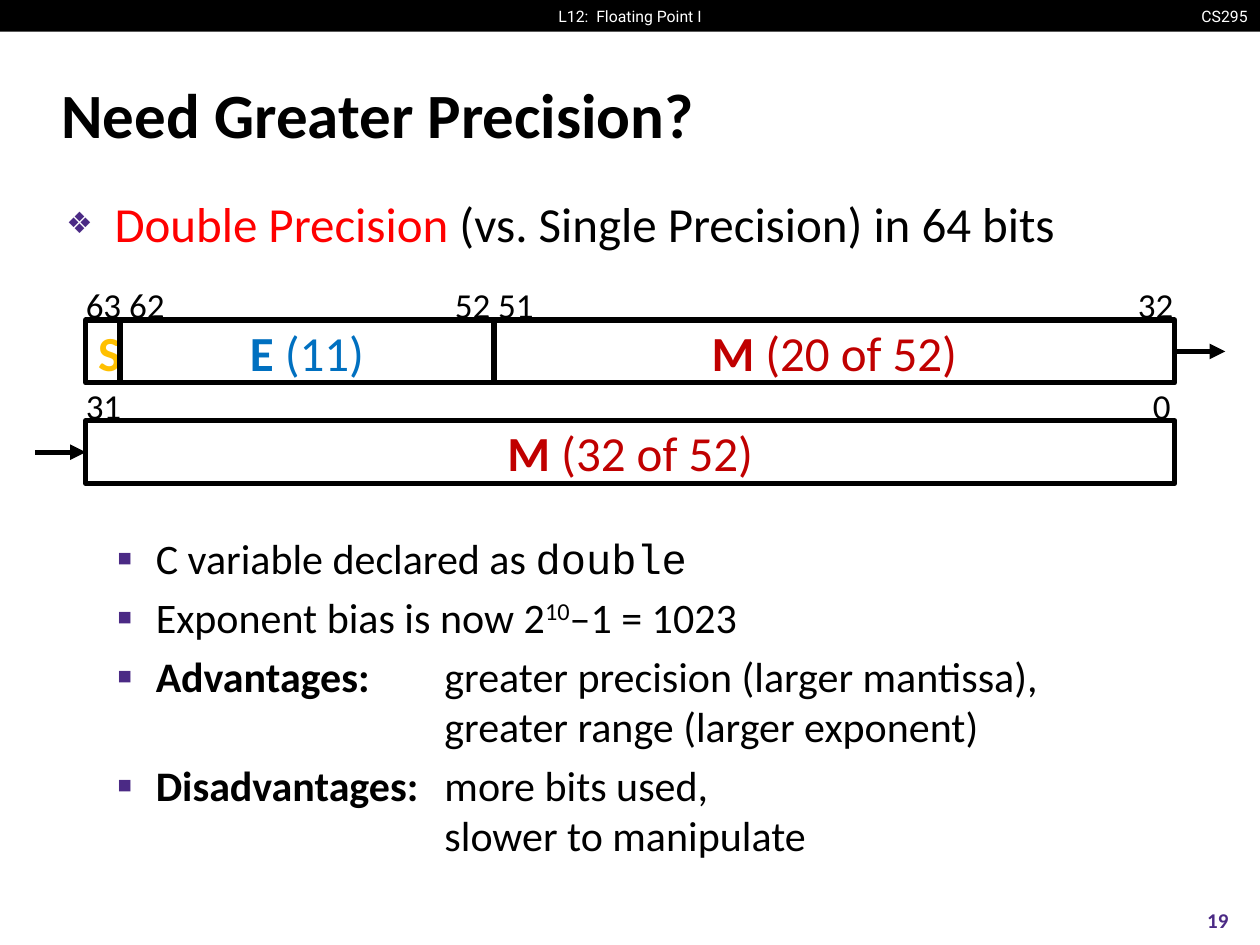
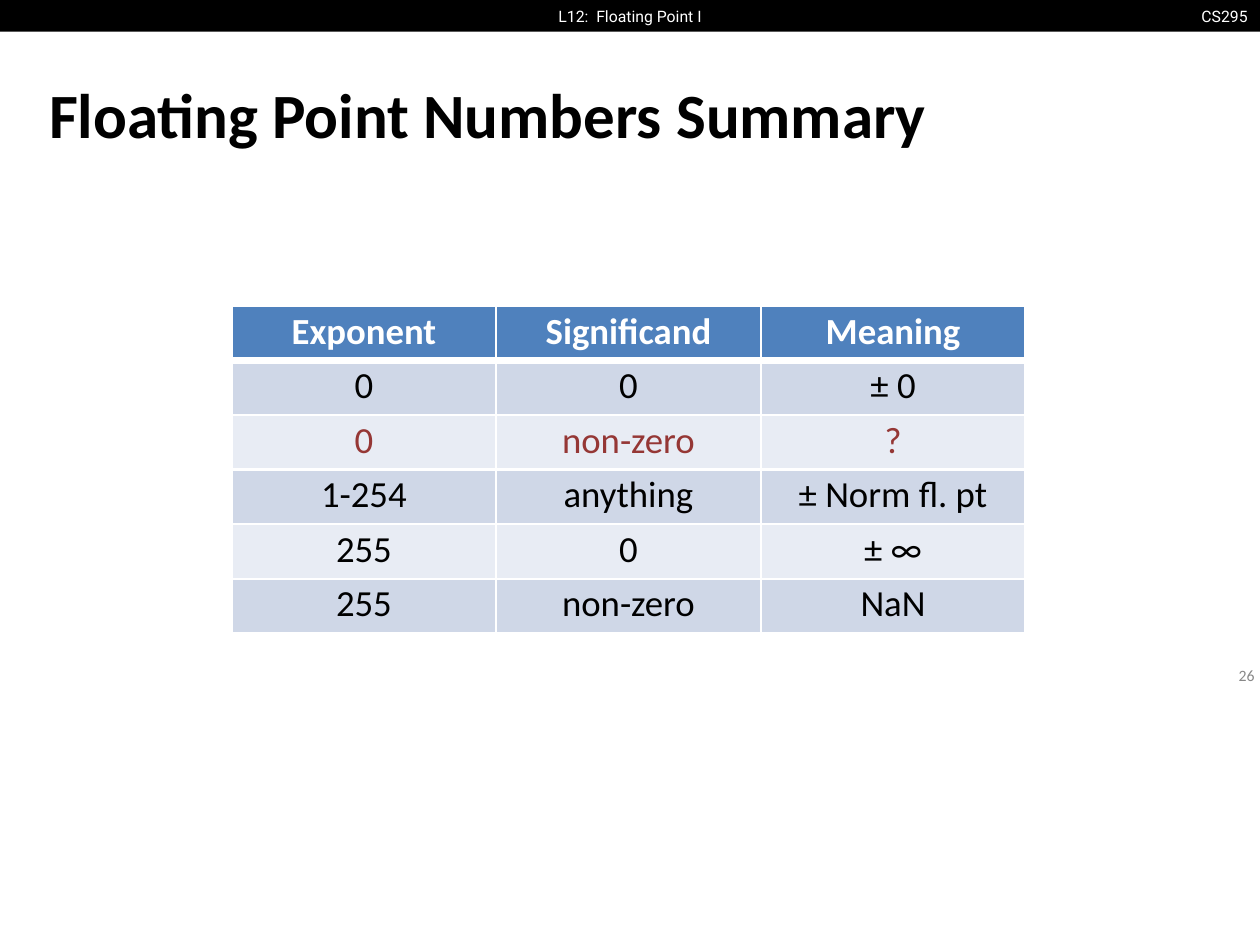
from dataclasses import dataclass
from lxml import etree
from pptx import Presentation
from pptx import util as u
from pptx.dml.color import RGBColor
from pptx.enum import shapes, text
from pptx.oxml.ns import qn


@dataclass(frozen=True)
class Theme:
    font: str = "Calibri"
    code_font: str = "Courier New"
    band_font: str = "Roboto"
    black: str = "000000"
    white: str = "FFFFFF"
    grey: str = "888888"
    purple: str = "4B2A85"
    red: str = "FF0000"
    sign: str = "FFC000"
    exponent: str = "0070C0"
    mantissa: str = "C00000"
    header: str = "4F81BD"
    stripes: tuple = ("CFD7E7", "E8ECF4")
    highlight: str = "953735"
    title: int = 36
    lead: int = 28
    item: int = 24
    cell: int = 21
    bit: int = 20
    number: int = 12
    small: int = 9


T = Theme()
ALIGN = text.PP_ALIGN
WIDTH, HEIGHT = 25.4, 19.05
TITLE_BOX = (0.99, 1.22, 23.34, 2.11)


def cm(*values):
    return [u.Cm(v) for v in values]


def sub(parent, tag, **attrs):
    return etree.SubElement(parent, qn(tag), **attrs)


def write(p, words, size=T.item, color=T.black, font=T.font, bold=False,
          align=None, baseline=None):
    if align is not None:
        p.alignment = align
    for i, line in enumerate(words.split("\n")):
        if i:
            p.add_line_break()
            sub(p._p[-1], "a:rPr", sz=str(size * 100))
        r = p.add_run()
        r.text = line
        r.font.size = u.Pt(size)
        r.font.name = font
        r.font.bold = bold
        r.font.color.rgb = RGBColor.from_string(color)
        if baseline:
            r._r.get_or_add_rPr().set("baseline", str(baseline * 1000))


def set_frame(tf, wrap=True, anchor=text.MSO_ANCHOR.TOP, side=0.25, edge=0.13):
    tf.word_wrap = wrap
    tf.auto_size = text.MSO_AUTO_SIZE.NONE
    tf.vertical_anchor = anchor
    tf.margin_left = tf.margin_right = u.Cm(side)
    tf.margin_top = tf.margin_bottom = u.Cm(edge)


def add_text(s, box, words, wrap=False, anchor=text.MSO_ANCHOR.TOP,
             side=0.25, edge=0.13, **fmt):
    tf = s.shapes.add_textbox(*cm(*box)).text_frame
    set_frame(tf, wrap, anchor, side, edge)
    write(tf.paragraphs[0], words, **fmt)


def add_rect(s, box, fill=None, line=None):
    sp = s.shapes.add_shape(shapes.MSO_SHAPE.RECTANGLE, *cm(*box))
    sp.shadow.inherit = False
    if fill:
        sp.fill.solid()
        sp.fill.fore_color.rgb = RGBColor.from_string(fill)
    else:
        sp.fill.background()
    if line:
        sp.line.color.rgb = RGBColor.from_string(line)
        sp.line.width = u.Pt(3)
    else:
        sp.line.fill.background()
    return sp


def add_arrow(s, x, y, length):
    c = s.shapes.add_connector(shapes.MSO_CONNECTOR.STRAIGHT, *cm(x, y, x + length, y))
    c.line.color.rgb = RGBColor.from_string(T.black)
    c.line.width = u.Pt(3)
    sub(c.line._get_or_add_ln(), "a:tailEnd", type="triangle")
    sub(c._element.spPr, "a:effectLst")
    return c


def add_band(s, box):
    x, y, w, h = box
    add_rect(s, box, fill=T.black)
    fmt = dict(size=T.small, color=T.white, font=T.band_font)
    add_text(s, (x + w - 1.5, y, 1.5, h), "CS295", align=ALIGN.RIGHT, **fmt)
    add_text(s, (x + w / 2 - 2.36, y, 4.72, h), "L12:  Floating Point I",
             align=ALIGN.CENTER, **fmt)


def place(sp, box):
    sp.left, sp.top, sp.width, sp.height = cm(*box)


def new_slide(prs, layout, title, side=0.25):
    s = prs.slides.add_slide(prs.slide_layouts[layout])
    add_band(s, (0, 0, WIDTH, 0.64))
    place(s.shapes.title, TITLE_BOX)
    tf = s.shapes.title.text_frame
    set_frame(tf, anchor=text.MSO_ANCHOR.MIDDLE, side=side)
    write(tf.paragraphs[0], title, size=T.title, bold=True, align=ALIGN.LEFT)
    return s


def set_bullet(p, char, percent, margin, hang):
    pPr = p._p.get_or_add_pPr()
    pPr.set("marL", str(u.Cm(margin)))
    pPr.set("indent", str(-u.Cm(hang)))
    pPr.set("defTabSz", str(u.Cm(2.54)))
    sub(sub(pPr, "a:buClr"), "a:srgbClr", val=T.purple)
    sub(pPr, "a:buSzPct", val=str(percent * 1000))
    sub(pPr, "a:buChar", char=char)


def fill_body(sp, box, lead, items, gap):
    place(sp, box)
    tf = sp.text_frame
    set_frame(tf)
    for i, runs in enumerate([lead] + items):
        p = tf.add_paragraph() if i else tf.paragraphs[0]
        p.level = min(i, 1)
        p.space_before = u.Pt({0: 2, 1: gap}.get(i, 4.8))
        if i:
            set_bullet(p, "▪", 110, 1.8, 0.79)
        else:
            set_bullet(p, "❖", 60, 0.97, 0.97)
        for words, fmt in runs:
            write(p, words, **{"size": T.item if i else T.lead, **fmt})


def add_word(s, box, fields, labels):
    x, y, w, h = box
    cells = []
    for name, bits, color, width in fields:
        sp = add_rect(s, (x, y, width, h), line=T.black)
        set_frame(sp.text_frame, anchor=text.MSO_ANCHOR.MIDDLE)
        p = sp.text_frame.paragraphs[0]
        write(p, name, size=T.lead, color=color, bold=True, align=ALIGN.CENTER)
        if bits:
            write(p, " " + bits, size=T.lead, color=color)
        cells.append(sp)
        x += width
    for words, dx, width in labels:
        add_text(s, (box[0] + dx, y - 0.86, width, 1.12), words, size=T.bit)
    return cells


def add_double_diagram(s, box):
    x, y, w, h = box
    row, length = 1.27, 1.02
    low_y = y + h - row
    high = add_word(s, (x, y, w, row), [
        ("S", "", T.sign, 0.69),
        ("E", "(11)", T.exponent, 7.54),
        ("M", "(20 of 52)", T.mantissa, w - 8.23),
    ], [("63 62", -0.25, 2.11), ("52 51", 7.19, 2.11), ("32", w - 0.99, 1.24)])
    low = add_word(s, (x, low_y, w, row), [("M", "(32 of 52)", T.mantissa, w)],
                   [("31", -0.25, 1.24), ("0", w - 0.69, 0.86)])
    add_arrow(s, x + w, y + row / 2, length).begin_connect(high[-1], 3)
    add_arrow(s, x - length, low_y + row / 2, length).end_connect(low[0], 1)


def set_borders(cell, widths):
    tcPr = cell._tc.get_or_add_tcPr()
    for side, width in zip("LRTB", widths):
        ln = sub(tcPr, "a:ln" + side, w=str(u.Pt(width)))
        sub(sub(ln, "a:solidFill"), "a:srgbClr", val=T.white)


def add_summary_table(s, box, rows, highlighted):
    table = s.shapes.add_table(len(rows), len(rows[0]), *cm(*box)).table
    table.first_row = table.horz_banding = False
    for i, values in enumerate(rows):
        table.rows[i].height = u.Cm(box[3] / len(rows))
        fill = T.stripes[(i - 1) % 2] if i else T.header
        color = T.highlight if i == highlighted else T.black if i else T.white
        for j, value in enumerate(values):
            cell = table.cell(i, j)
            set_borders(cell, (1.5, 1.5, 4.25 if i == 1 else 1.5, 1.5 if i else 4.25))
            cell.fill.solid()
            cell.fill.fore_color.rgb = RGBColor.from_string(fill)
            cell.margin_left = cell.margin_right = cell.margin_bottom = 0
            cell.margin_top = u.Cm(0.06)
            p = cell.text_frame.paragraphs[0]
            p.space_before = u.Pt(1.8)
            write(p, value, size=T.cell, color=color, bold=i == 0, align=ALIGN.CENTER)


def precision_slide(prs):
    s = new_slide(prs, 1, "Need Greater Precision?")
    bold = {"bold": True}
    fill_body(s.placeholders[1], (1.09, 3.78, 23.24, 13.82), [
        ("Double Precision", {"color": T.red}),
        (" (vs. Single Precision) in 64 bits", {}),
    ], [
        [("C variable declared as ", {}), ("double", {"font": T.code_font})],
        [("Exponent bias is now 2", {}), ("10", {"baseline": 30}), ("–1 = 1023", {})],
        [("Advantages:", bold),
         ("\tgreater precision (larger mantissa),\n"
          "\t\t\tgreater range (larger exponent)", {})],
        [("Disadvantages:", bold),
         ("\tmore bits used,\n\t\t\tslower to manipulate", {})],
    ], gap=160)
    add_double_diagram(s, (1.73, 6.45, 21.95, 3.3))
    add_text(s, (23.7, 18.03, 1.7, 1.02), "19", wrap=True, size=T.number,
             color=T.purple, bold=True, align=ALIGN.CENTER,
             anchor=text.MSO_ANCHOR.MIDDLE)


def summary_slide(prs):
    s = new_slide(prs, 5, "Floating Point Numbers Summary", side=0)
    add_summary_table(s, (4.67, 6.17, 16, 6.6), [
        ("Exponent", "Significand", "Meaning"),
        ("0", "0", "± 0"),
        ("0", "non-zero", "?"),
        ("1-254", "anything", "± Norm fl. pt"),
        ("255", "0", "± ∞"),
        ("255", "non-zero", "NaN"),
    ], highlighted=2)
    add_text(s, (24.87, 13.39, 0.53, 0.46), "26", size=T.small, color=T.grey,
             side=0.1, edge=0, anchor=text.MSO_ANCHOR.MIDDLE)


def main():
    prs = Presentation()
    prs.slide_width, prs.slide_height = cm(WIDTH, HEIGHT)
    precision_slide(prs)
    summary_slide(prs)
    prs.save("out.pptx")


if __name__ == "__main__":
    main()
